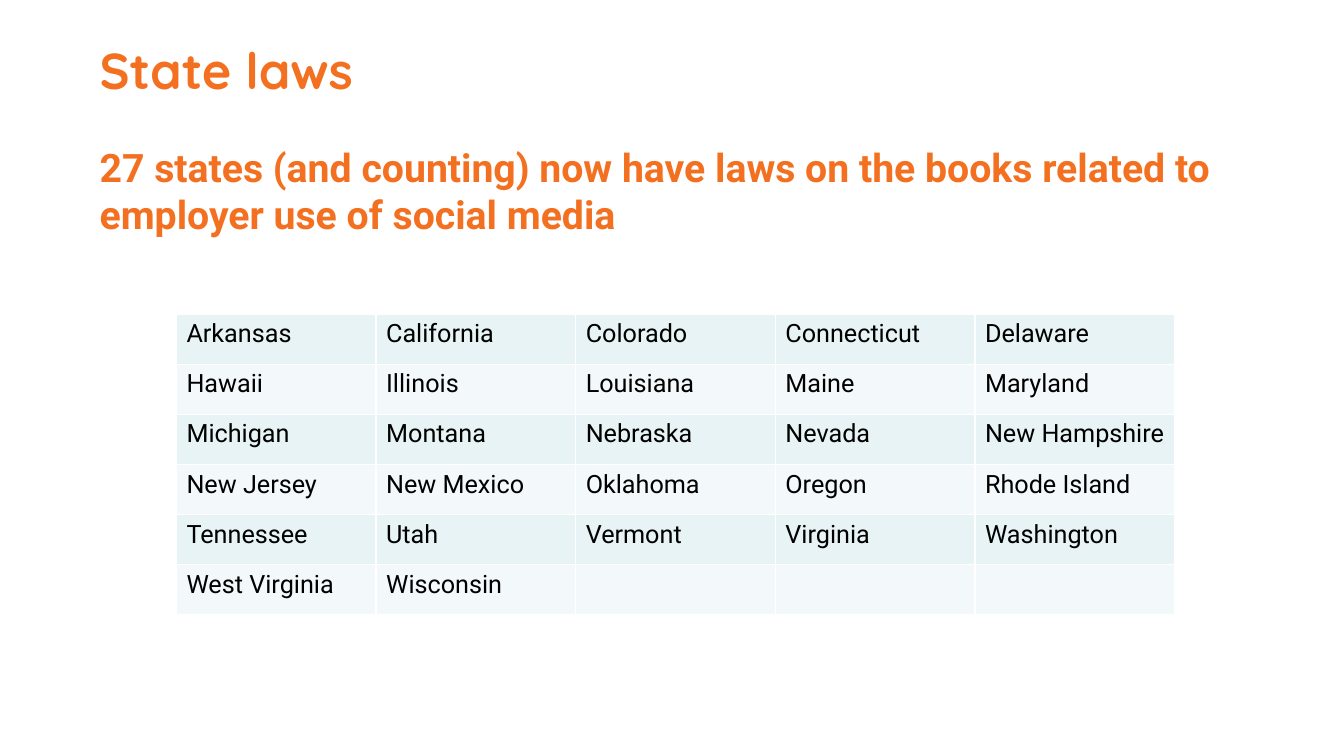
from dataclasses import dataclass

from lxml import etree
from pptx import Presentation
from pptx.dml.color import RGBColor
from pptx.enum import text
from pptx.oxml import ns
from pptx.util import Inches, Pt

COLORS = {
    "heading": "F37021",
    "state": "000000",
    "odd_row": "E7F3F4",
    "even_row": "F3F9FA",
    "border": "FFFFFF",
}
STATES = [
    "Arkansas", "California", "Colorado", "Connecticut", "Delaware",
    "Hawaii", "Illinois", "Louisiana", "Maine", "Maryland",
    "Michigan", "Montana", "Nebraska", "Nevada", "New Hampshire",
    "New Jersey", "New Mexico", "Oklahoma", "Oregon", "Rhode Island",
    "Tennessee", "Utah", "Vermont", "Virginia", "Washington",
    "West Virginia", "Wisconsin",
]
COLUMNS = 5
BORDER_WIDTH = Pt(1)


@dataclass
class Heading:
    words: str
    left: float
    top: float
    width: float
    height: float
    font: str
    size: int
    anchor: text.MSO_ANCHOR


HEADINGS = [
    Heading("State laws", 0.89, 0.3, 12.4, 0.78, "Quicksand", 36,
            text.MSO_ANCHOR.MIDDLE),
    Heading("27 states (and counting) now have laws on the books related to "
            "employer use of social media",
            0.89, 1.37, 11.43, 5.37, "Roboto", 28, text.MSO_ANCHOR.TOP),
]


def style_runs(paragraph, font: str, size: int, color: str, bold: bool) -> None:
    for run in paragraph.runs:
        run.font.name = font
        run.font.size = Pt(size)
        run.font.bold = bold
        run.font.color.rgb = RGBColor.from_string(COLORS[color])


def add_heading(slide, heading: Heading) -> None:
    box = slide.shapes.add_textbox(Inches(heading.left), Inches(heading.top),
                                   Inches(heading.width), Inches(heading.height))
    frame = box.text_frame
    frame.word_wrap = True
    frame.vertical_anchor = heading.anchor
    frame.text = heading.words
    style_runs(frame.paragraphs[0], heading.font, heading.size, "heading", True)


def add_borders(cell) -> None:
    """Line all four sides; the lines must come before the cell's fill."""
    properties = cell._tc.get_or_add_tcPr()
    for position, side in enumerate(("lnL", "lnR", "lnT", "lnB")):
        line = etree.Element(ns.qn(f"a:{side}"), w=str(BORDER_WIDTH))
        fill = etree.SubElement(line, ns.qn("a:solidFill"))
        etree.SubElement(fill, ns.qn("a:srgbClr"), val=COLORS["border"])
        properties.insert(position, line)


def add_states(slide) -> None:
    row_count = -(-len(STATES) // COLUMNS)
    table = slide.shapes.add_table(row_count, COLUMNS, Inches(1.75), Inches(3.12),
                                   Inches(9.9), Inches(2.98)).table
    table.first_row = False
    table.horz_banding = False
    for index, cell in enumerate(table.iter_cells()):
        band = "even_row" if index // COLUMNS % 2 else "odd_row"
        cell.fill.solid()
        cell.fill.fore_color.rgb = RGBColor.from_string(COLORS[band])
        add_borders(cell)
        if index < len(STATES):
            cell.text_frame.text = STATES[index]
            style_runs(cell.text_frame.paragraphs[0], "Roboto", 18, "state", False)


def main() -> None:
    deck = Presentation()
    deck.slide_width = Inches(13.33)
    deck.slide_height = Inches(7.5)
    slide = deck.slides.add_slide(deck.slide_layouts[6])
    for heading in HEADINGS:
        add_heading(slide, heading)
    add_states(slide)
    deck.save("out.pptx")


if __name__ == "__main__":
    main()
